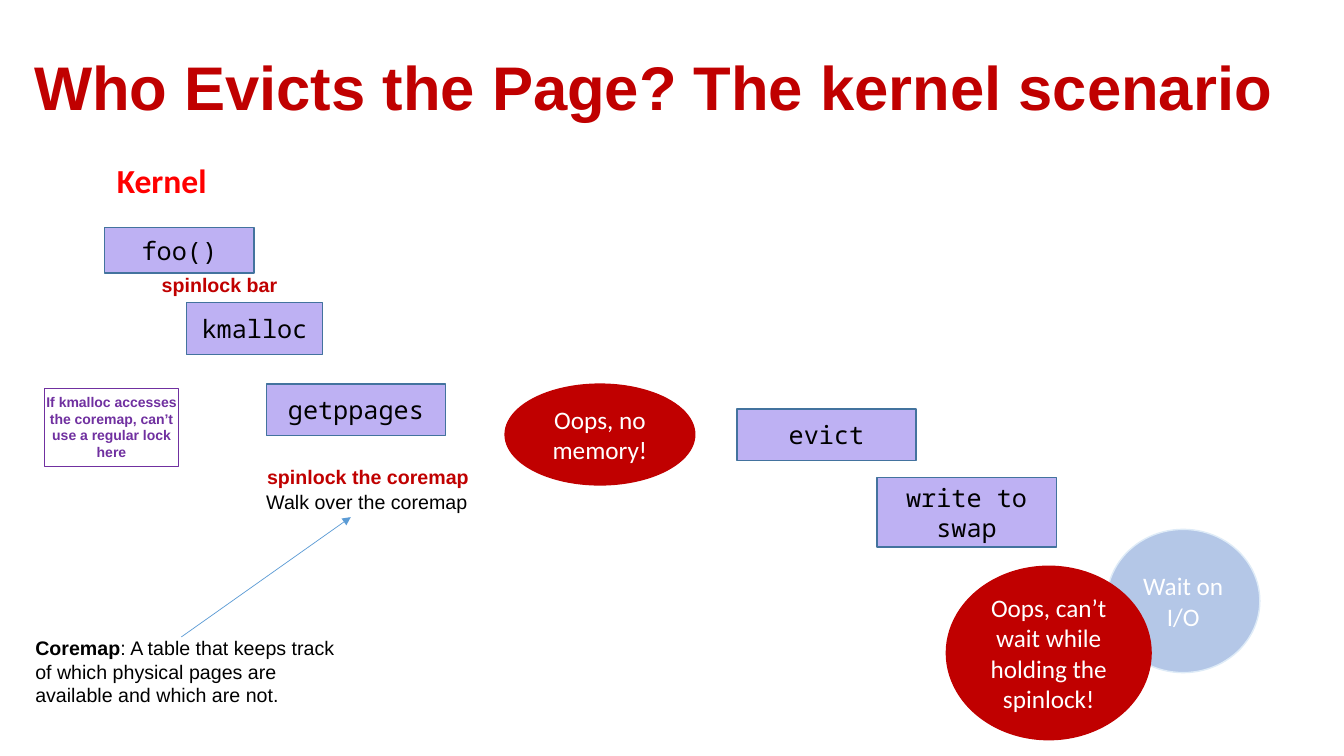
"""Build the slide on who evicts the page in the kernel scenario."""
from lxml.etree import SubElement
from pptx import Presentation
from pptx.dml.color import RGBColor
from pptx.enum.shapes import MSO_CONNECTOR, MSO_SHAPE
from pptx.enum.text import MSO_ANCHOR, PP_ALIGN
from pptx.oxml.ns import qn
from pptx.util import Cm, Pt

RED = RGBColor(0xC0, 0x00, 0x00)
BRIGHT_RED = RGBColor(0xFF, 0x00, 0x00)
LILAC = RGBColor(0xBE, 0xB1, 0xF3)
STEEL = RGBColor(0x43, 0x73, 0x9E)
PALE_BLUE = RGBColor(0xB4, 0xC7, 0xE7)
ICE = RGBColor(0xDE, 0xEB, 0xF7)
ARROW_BLUE = RGBColor(0x5B, 0x9B, 0xD5)
PURPLE = RGBColor(0x70, 0x30, 0xA0)
BLACK = RGBColor(0x00, 0x00, 0x00)
WHITE = RGBColor(0xFF, 0xFF, 0xFF)

TITLE = ("Who Evicts the Page? The kernel scenario", (0.61, 0.43, 32.51, 3.68))
HEADING = ("Kernel", (2.64, 3.91, 2.87, 1.27))
CALLS = [
    ("foo()", (2.64, 5.74, 3.76, 1.14)),
    ("kmalloc", (4.7, 7.62, 3.43, 1.32)),
    ("getppages", (6.71, 9.68, 4.52, 1.3)),
    ("evict", (18.57, 10.31, 4.52, 1.3)),
    ("write to swap", (22.1, 12.04, 4.52, 1.75)),
]
EVENTS = [
    ("Oops, no memory!", (12.73, 9.68, 4.78, 2.54), RED, RED),
    ("Wait on I/O", (27.89, 13.34, 3.86, 3.61), PALE_BLUE, ICE),
    ("Oops, can’t wait while holding the spinlock!", (23.85, 14.27, 5.16, 4.37), RED, RED),
]
STEPS = [
    ("Walk over the coremap", (6.71, 12.22, 5.59, 0.86), BLACK, False, PP_ALIGN.LEFT),
    ("spinlock the coremap", (6.73, 11.58, 5.59, 0.86), RED, True, PP_ALIGN.LEFT),
    ("spinlock bar", (2.74, 6.76, 5.59, 0.86), RED, True, PP_ALIGN.CENTER),
]
TERM = ("Coremap", (0.89, 15.9, 7.95, 2.06))
DEFINITION = ": A table that keeps track of which physical pages are available and which are not."
ARROW = (4.57, 16.05, 8.84, 13.03)
NOTE = ("If kmalloc accesses the coremap, can’t use a regular lock here", (1.12, 9.78, 3.38, 1.98))


def write(sp, text, font, size, color, bold=False, align=PP_ALIGN.CENTER,
          anchor=MSO_ANCHOR.MIDDLE, side=0.25):
    tf = sp.text_frame
    tf.word_wrap = True
    tf.vertical_anchor = anchor
    tf.margin_left = tf.margin_right = Cm(side)
    tf.margin_top = tf.margin_bottom = Cm(0.13)
    p = tf.paragraphs[0]
    p.alignment = align
    p.font.name, p.font.size = font, Pt(size)
    p.font.color.rgb = color
    if bold:
        p.font.bold = True
    p.add_run().text = text
    return p


def add_text(s, text, box, *style, **options):
    return write(s.shapes.add_textbox(*map(Cm, box)), text, *style, **options)


def add_box(s, kind, box, fill, line, width=1):
    sp = s.shapes.add_shape(kind, *map(Cm, box))
    sp.shadow.inherit = False
    if fill is None:
        sp.fill.background()
    else:
        sp.fill.solid()
        sp.fill.fore_color.rgb = fill
    sp.line.color.rgb = line
    sp.line.width = Pt(width)
    return sp


def add_arrow(s, ends):
    arrow = s.shapes.add_connector(MSO_CONNECTOR.STRAIGHT, *map(Cm, ends))
    arrow.line.color.rgb = ARROW_BLUE
    arrow.line.width = Pt(0.5)
    SubElement(arrow.line._get_or_add_ln(), qn("a:tailEnd"), type="triangle")
    SubElement(arrow._element.spPr, qn("a:effectLst"))


def main():
    prs = Presentation()
    prs.slide_width, prs.slide_height = Cm(33.87), Cm(19.05)
    s = prs.slides.add_slide(prs.slide_layouts[6])

    p = add_text(s, *TITLE, "Arial", 44, RED, bold=True, align=PP_ALIGN.LEFT)
    p.line_spacing = 0.9
    add_text(s, *HEADING, "Calibri", 24, BRIGHT_RED, bold=True, anchor=MSO_ANCHOR.TOP)

    for text, box in CALLS:
        sp = add_box(s, MSO_SHAPE.RECTANGLE, box, LILAC, STEEL)
        write(sp, text, "Noto Sans Mono", 18, BLACK)
    for text, box, fill, line in EVENTS:
        sp = add_box(s, MSO_SHAPE.OVAL, box, fill, line)
        write(sp, text, "Calibri", 18, WHITE)
    for text, box, color, bold, align in STEPS:
        add_text(s, text, box, "Arial", 14, color, bold, align, MSO_ANCHOR.TOP, side=0)

    p = add_text(s, *TERM, "Arial", 14, BLACK, align=PP_ALIGN.LEFT,
                 anchor=MSO_ANCHOR.TOP, side=0)
    p.runs[0].font.bold = True
    p.add_run().text = DEFINITION
    add_arrow(s, ARROW)

    text, box = NOTE
    sp = add_box(s, MSO_SHAPE.RECTANGLE, box, None, PURPLE, 0.75)
    write(sp, text, "Arial", 10, PURPLE, bold=True, anchor=MSO_ANCHOR.TOP, side=0)

    prs.save("out.pptx")


if __name__ == "__main__":
    main()
